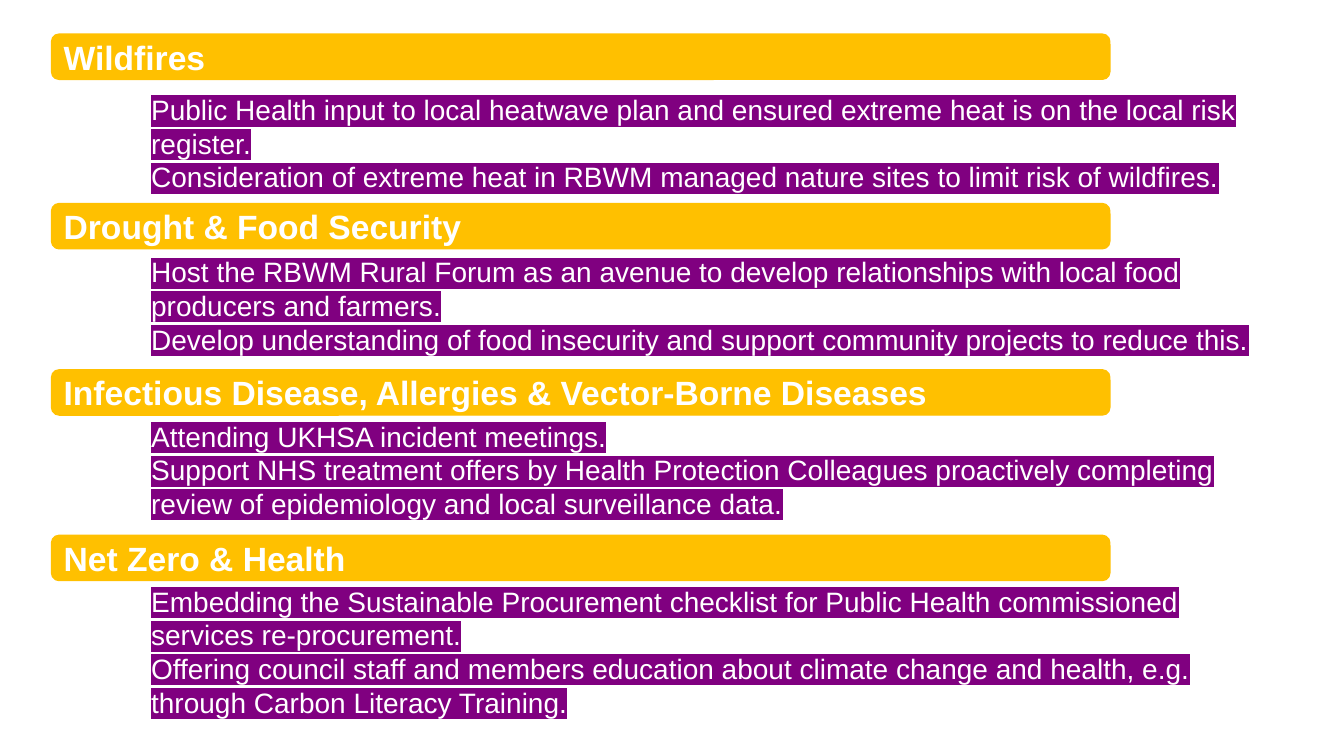
from pptx import Presentation
from pptx.util import Cm, Pt
from pptx.dml.color import RGBColor
from pptx.enum.shapes import MSO_SHAPE
from pptx.enum.text import MSO_ANCHOR, MSO_AUTO_SIZE, PP_ALIGN
from pptx.oxml import parse_xml
from pptx.oxml.ns import nsdecls

GOLD = RGBColor(0xFF, 0xC0, 0x00)
WHITE = RGBColor(0xFF, 0xFF, 0xFF)
PURPLE = RGBColor(0x80, 0x00, 0x80)

TOPICS = [
    (0.86, 2.21, 2.82, "Wildfires", [
        "Public Health input to local heatwave plan and ensured extreme heat is on the local risk register.",
        "Consideration of extreme heat in RBWM managed nature sites to limit risk of wildfires."]),
    (5.13, 6.3, 2.82, "Drought & Food Security", [
        "Host the RBWM Rural Forum as an avenue to develop relationships with local food producers and farmers.",
        "Develop understanding of food insecurity and support community projects to reduce this."]),
    (9.32, 10.44, 2.82, "Infectious Disease, Allergies & Vector-Borne Diseases", [
        "Attending UKHSA incident meetings.",
        "Support NHS treatment offers by Health Protection Colleagues proactively completing review of epidemiology and local surveillance data."]),
    (13.49, 14.6, 3.68, "Net Zero & Health", [
        "Embedding the Sustainable Procurement checklist for Public Health commissioned services re-procurement.",
        "Offering council staff and members education about climate change and health, e.g. through Carbon Literacy Training."]),
]


def style(run, size, bold):
    run.font.name = "Arial"
    run.font.size = Pt(size)
    run.font.bold = bold
    run.font.color.rgb = WHITE


def bullet(para):
    props = para._p.get_or_add_pPr()
    props.set("marL", str(Cm(0.79)))
    props.set("indent", str(-Cm(0.79)))
    props.append(parse_xml(f'<a:buFont {nsdecls("a")} typeface="Arial"/>'))
    props.append(parse_xml(f'<a:buChar {nsdecls("a")} char="•"/>'))


deck = Presentation()
deck.slide_width = Cm(33.87)
deck.slide_height = Cm(19.05)
slide = deck.slides.add_slide(deck.slide_layouts[6])

for bar_top, list_top, height, title, points in TOPICS:
    group = slide.shapes.add_group_shape()

    bar = group.shapes.add_shape(
        MSO_SHAPE.ROUNDED_RECTANGLE, Cm(1.3), Cm(bar_top), Cm(26.67), Cm(1.14))
    bar.shadow.inherit = False
    bar.fill.solid()
    bar.fill.fore_color.rgb = GOLD
    bar.line.color.rgb = GOLD
    bar.line.width = Pt(1)
    frame = bar.text_frame
    frame.text = title
    frame.vertical_anchor = MSO_ANCHOR.MIDDLE
    frame.paragraphs[0].alignment = PP_ALIGN.LEFT
    style(frame.paragraphs[0].runs[0], 24, True)

    box = group.shapes.add_textbox(Cm(2.77), Cm(list_top), Cm(29.82), Cm(height))
    frame = box.text_frame
    frame.word_wrap = True
    frame.auto_size = MSO_AUTO_SIZE.SHAPE_TO_FIT_TEXT
    frame.text = "\n".join(points)
    for para in frame.paragraphs:
        bullet(para)
        run = para.runs[0]
        style(run, 20, False)
        fill = run._r.get_or_add_rPr().solidFill
        fill.addnext(parse_xml(
            f'<a:highlight {nsdecls("a")}><a:srgbClr val="{PURPLE}"/></a:highlight>'))

deck.save("out.pptx")
